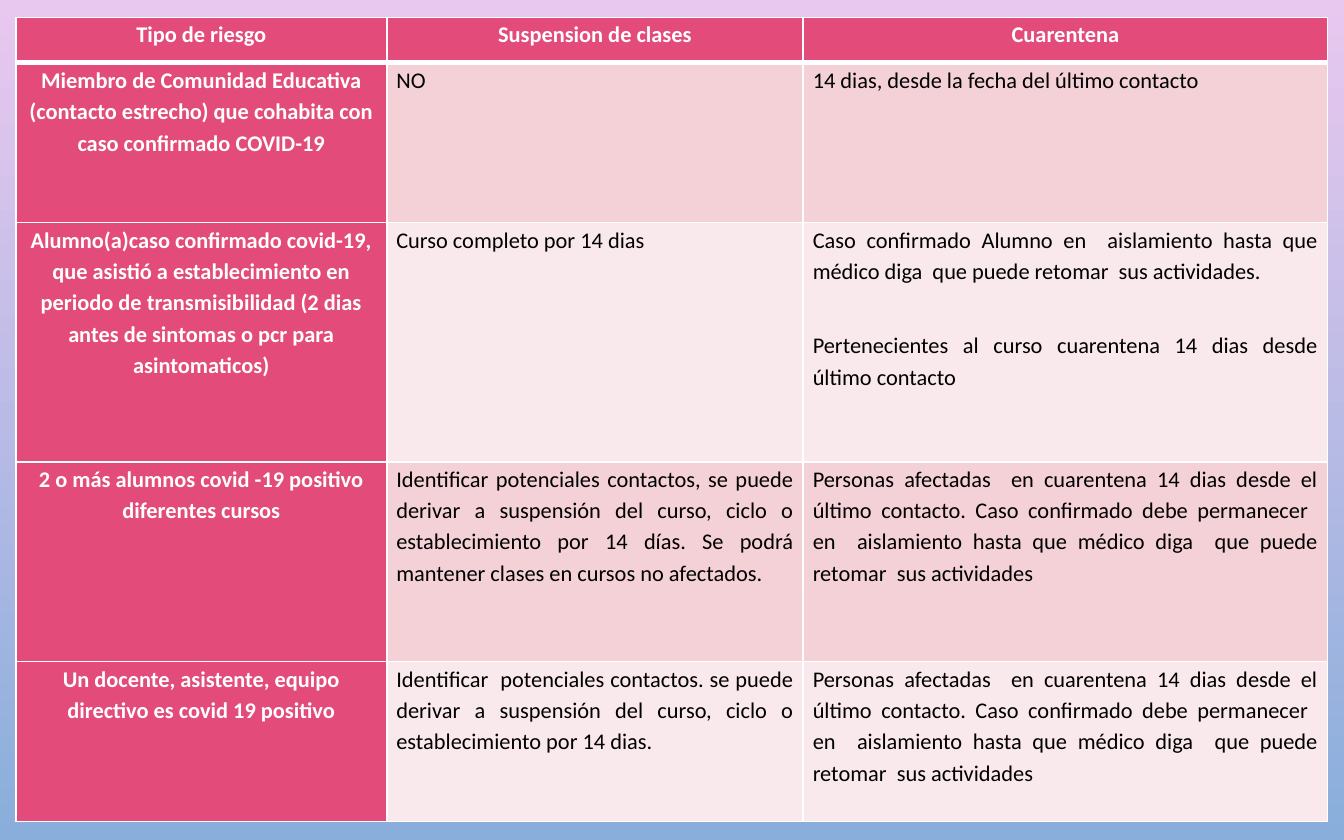
from lxml.etree import SubElement
from pptx import Presentation
from pptx.dml.color import RGBColor
from pptx.enum.text import PP_ALIGN
from pptx.oxml.ns import qn
from pptx.util import Cm, Pt

WHITE, BLACK, PINK = "FFFFFF", "000000", "E34B7A"
BANDS = ["F4D0D7", "FAE9EC"]


def color(value):
    return RGBColor.from_string(value)


def add_borders(cell, widths):
    """Draw white cell borders; widths maps each side (L, R, T, B) to points."""
    properties = cell._tc.get_or_add_tcPr()
    for position, (side, width) in enumerate(widths.items()):
        line = SubElement(properties, qn(f"a:ln{side}"), w=str(Pt(width)))
        fill = SubElement(line, qn("a:solidFill"))
        SubElement(fill, qn("a:srgbClr"), val=WHITE)
        properties.insert(position, line)


affected = (
    "Personas afectadas  en cuarentena 14 dias desde el último contacto. "
    "Caso confirmado debe permanecer  en  aislamiento hasta que médico diga  "
    "que puede retomar  sus actividades"
)
rows = [
    ["Tipo de riesgo", "Suspension de clases", "Cuarentena"],
    [
        "Miembro de Comunidad Educativa (contacto estrecho) que cohabita con "
        "caso confirmado COVID-19",
        "NO",
        "14 dias, desde la fecha del último contacto",
    ],
    [
        "Alumno(a)caso confirmado covid-19, que asistió a establecimiento en "
        "periodo de transmisibilidad (2 dias antes de sintomas o pcr para asintomaticos)",
        "Curso completo por 14 dias",
        "Caso confirmado Alumno en  aislamiento hasta que médico diga  que puede "
        "retomar  sus actividades.\n"
        "Pertenecientes al curso cuarentena 14 dias desde último contacto",
    ],
    [
        "2 o más alumnos covid -19 positivo diferentes cursos",
        "Identificar potenciales contactos, se puede derivar a suspensión del curso, "
        "ciclo o establecimiento por 14 días. Se podrá mantener clases en cursos "
        "no afectados.",
        affected,
    ],
    [
        "Un docente, asistente, equipo directivo es covid 19 positivo",
        "Identificar  potenciales contactos. se puede derivar a suspensión del curso, "
        "ciclo o establecimiento por 14 dias.",
        affected,
    ],
]
column_widths = [7.01, 7.87, 9.91]
row_heights = [0.86, 3.02, 4.52, 3.78, 3.02]
margins = {
    "margin_left": Cm(0.18),
    "margin_right": Cm(0.18),
    "margin_top": Cm(0),
    "margin_bottom": Cm(0),
}

presentation = Presentation()
presentation.slide_width = Cm(25.4)
presentation.slide_height = Cm(15.88)
slide = presentation.slides.add_slide(presentation.slide_layouts[6])

background = slide.background.fill
background.gradient()
background.gradient_angle = 270
for stop, value in zip(background.gradient_stops, ["E9C8EF", "89AEDB"]):
    stop.color.rgb = color(value)

table = slide.shapes.add_table(
    len(rows), len(column_widths), Cm(0.3), Cm(0.33),
    Cm(sum(column_widths)), Cm(sum(row_heights)),
).table
for column, width in zip(table.columns, column_widths):
    column.width = Cm(width)
for row, height in zip(table.rows, row_heights):
    row.height = Cm(height)

for row_index, texts in enumerate(rows):
    for column_index, text in enumerate(texts):
        is_heading = row_index == 0 or column_index == 0
        cell = table.cell(row_index, column_index)
        for name, value in margins.items():
            setattr(cell, name, value)
        cell.fill.solid()
        cell.fill.fore_color.rgb = color(
            PINK if is_heading else BANDS[(row_index - 1) % 2]
        )
        add_borders(cell, {
            "L": 1,
            "R": 1,
            "T": 3 if row_index == 1 else 1,
            "B": 3 if row_index == 0 else 1,
        })
        cell.text = text
        for number, paragraph in enumerate(cell.text_frame.paragraphs):
            paragraph.alignment = PP_ALIGN.CENTER if is_heading else PP_ALIGN.JUSTIFY
            paragraph.line_spacing = 1.15
            if number > 0:
                paragraph.space_before = Pt(23)
            font_format = {"name": "Calibri", "size": Pt(12), "bold": is_heading}
            for name, value in font_format.items():
                setattr(paragraph.font, name, value)
            paragraph.font.color.rgb = color(WHITE if is_heading else BLACK)

presentation.save("out.pptx")
